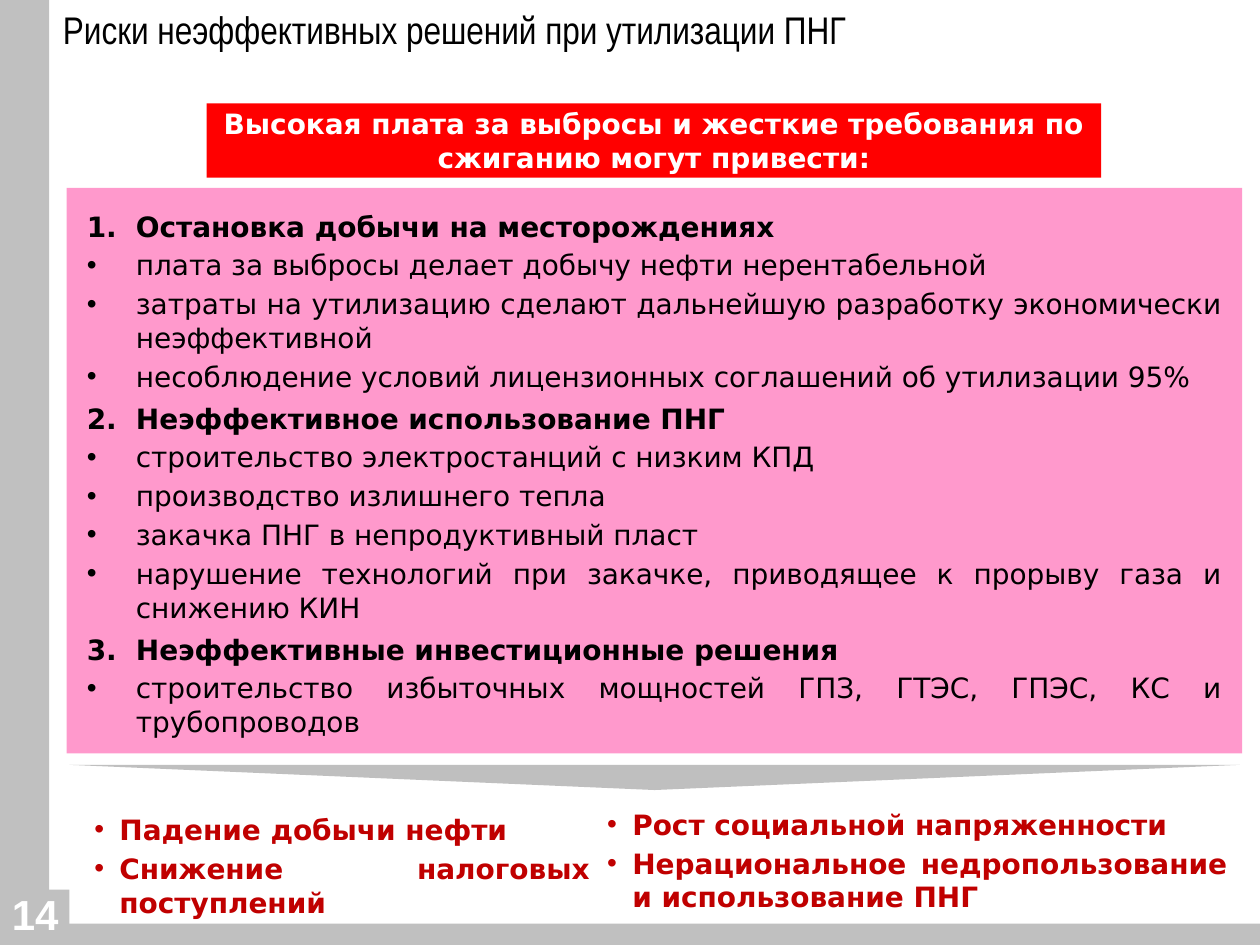
import pptx
import pptx.util
import pptx.dml.color
import pptx.enum.shapes
import pptx.enum.text
import pptx.oxml.ns
import lxml.etree

Inches = pptx.util.Inches
Pt = pptx.util.Pt
Shape = pptx.enum.shapes.MSO_SHAPE
Align = pptx.enum.text.PP_ALIGN
Anchor = pptx.enum.text.MSO_ANCHOR

COLORS = {
    "frame": "C0C0C0",
    "arrow": "BFBFBF",
    "panel": "FF99CC",
    "banner": "FF0000",
    "result": "C00000",
    "black": "000000",
    "white": "FFFFFF",
}

RISKS = [
    ("Остановка добычи на месторождениях", [
        "плата за выбросы делает добычу нефти нерентабельной",
        "затраты на утилизацию сделают дальнейшую разработку экономически неэффективной",
        "несоблюдение условий лицензионных соглашений об утилизации 95%",
    ]),
    ("Неэффективное использование ПНГ", [
        "строительство электростанций с низким КПД",
        "производство излишнего тепла",
        "закачка ПНГ в непродуктивный пласт",
        "нарушение технологий при закачке, приводящее к прорыву газа и снижению КИН",
    ]),
    ("Неэффективные инвестиционные решения", [
        "строительство избыточных мощностей ГПЗ, ГТЭС, ГПЭС, КС и трубопроводов",
    ]),
]

RESULTS = [
    ((0.65, 6.4, 4.13, 0.75),
     ["Падение добычи нефти", "Снижение налоговых поступлений"]),
    ((4.72, 6.36, 5.12, 0.75),
     ["Рост социальной напряженности",
      "Нерациональное недропользование и использование ПНГ"]),
]


class SlideBuilder:
    """Holds the text style and the slide being filled."""

    font_name = "DejaVu Sans"
    font_size = 16

    def __init__(self, slide):
        self.slide = slide

    def block(self, kind, box, color, rotation=0):
        shape = self.slide.shapes.add_shape(kind, *map(Inches, box))
        shape.shadow.inherit = False
        shape.fill.solid()
        shape.fill.fore_color.rgb = pptx.dml.color.RGBColor.from_string(COLORS[color])
        shape.line.fill.background()
        shape.rotation = rotation
        return shape

    def text_box(self, box, anchor=Anchor.TOP):
        frame = self.slide.shapes.add_textbox(*map(Inches, box)).text_frame
        frame.word_wrap = True
        frame.vertical_anchor = anchor
        return frame

    def set_text(self, paragraph, text, color, align, bold=False, name=None, size=None):
        paragraph.text = text
        paragraph.alignment = align
        font = paragraph.font
        font.name = name or self.font_name
        font.size = Pt(size or self.font_size)
        font.bold = bold
        font.color.rgb = pptx.dml.color.RGBColor.from_string(COLORS[color])

    def list_item(self, frame, text, color, indent, bold=False, number=None):
        first = frame.paragraphs[0]
        paragraph = first if not first.text else frame.add_paragraph()
        properties = paragraph._p.get_or_add_pPr()
        properties.set("marL", str(Inches(indent)))
        properties.set("indent", str(-Inches(indent)))
        qualified = pptx.oxml.ns.qn
        if number:
            lxml.etree.SubElement(properties, qualified("a:buAutoNum"),
                                  type="arabicPeriod", startAt=str(number))
        else:
            lxml.etree.SubElement(properties, qualified("a:buFont"), typeface="Arial")
            lxml.etree.SubElement(properties, qualified("a:buChar"), char="•")
        self.set_text(paragraph, text, color, Align.JUSTIFY, bold)
        paragraph.space_before = Pt(4.8 if number else 3)


def main():
    presentation = pptx.Presentation()
    presentation.slide_width = Inches(10)
    presentation.slide_height = Inches(7.5)
    builder = SlideBuilder(presentation.slides.add_slide(presentation.slide_layouts[6]))

    # Grey frame and page number
    for box in [(0, 0, 0.39, 7.1), (0, 7.06, 0.55, 0.32), (0, 7.33, 10, 0.17)]:
        builder.block(Shape.RECTANGLE, box, "frame")
    page_number = builder.text_box((-0.25, 7, 1.06, 0.57))
    builder.set_text(page_number.paragraphs[0], "14", "white", Align.CENTER, True, "Arial", 24)

    # Title
    title = builder.text_box((0.5, 0.09, 9, 0.33), Anchor.MIDDLE)
    title.margin_left = title.margin_right = title.margin_top = title.margin_bottom = 0
    builder.set_text(title.paragraphs[0], "Риски неэффективных решений при утилизации ПНГ",
                     "black", Align.LEFT, name="Arial Narrow", size=22)
    title.paragraphs[0].line_spacing = 0.9

    # Red banner
    banner = builder.block(Shape.RECTANGLE, (1.64, 0.82, 7.1, 0.59), "banner").text_frame
    banner.word_wrap = True
    banner.vertical_anchor = Anchor.MIDDLE
    builder.set_text(banner.paragraphs[0],
                     "Высокая плата за выбросы и жесткие требования по сжиганию могут привести:",
                     "white", Align.CENTER, True)

    # Panel with numbered risks
    builder.block(Shape.RECTANGLE, (0.53, 1.49, 9.33, 4.49), "panel")
    risks = builder.text_box((0.59, 1.61, 9.21, 3.58))
    for number, (heading, details) in enumerate(RISKS, start=1):
        builder.list_item(risks, heading, "black", 0.39, True, number)
        for detail in details:
            builder.list_item(risks, detail, "black", 0.39)

    # Downward wedge and results
    builder.block(Shape.ISOSCELES_TRIANGLE, (0.55, 6.07, 9.29, 0.2), "arrow", 180)
    for box, lines in RESULTS:
        results = builder.text_box(box)
        for line in lines:
            builder.list_item(results, line, "result", 0.2, True)

    presentation.save("out.pptx")


if __name__ == "__main__":
    main()
